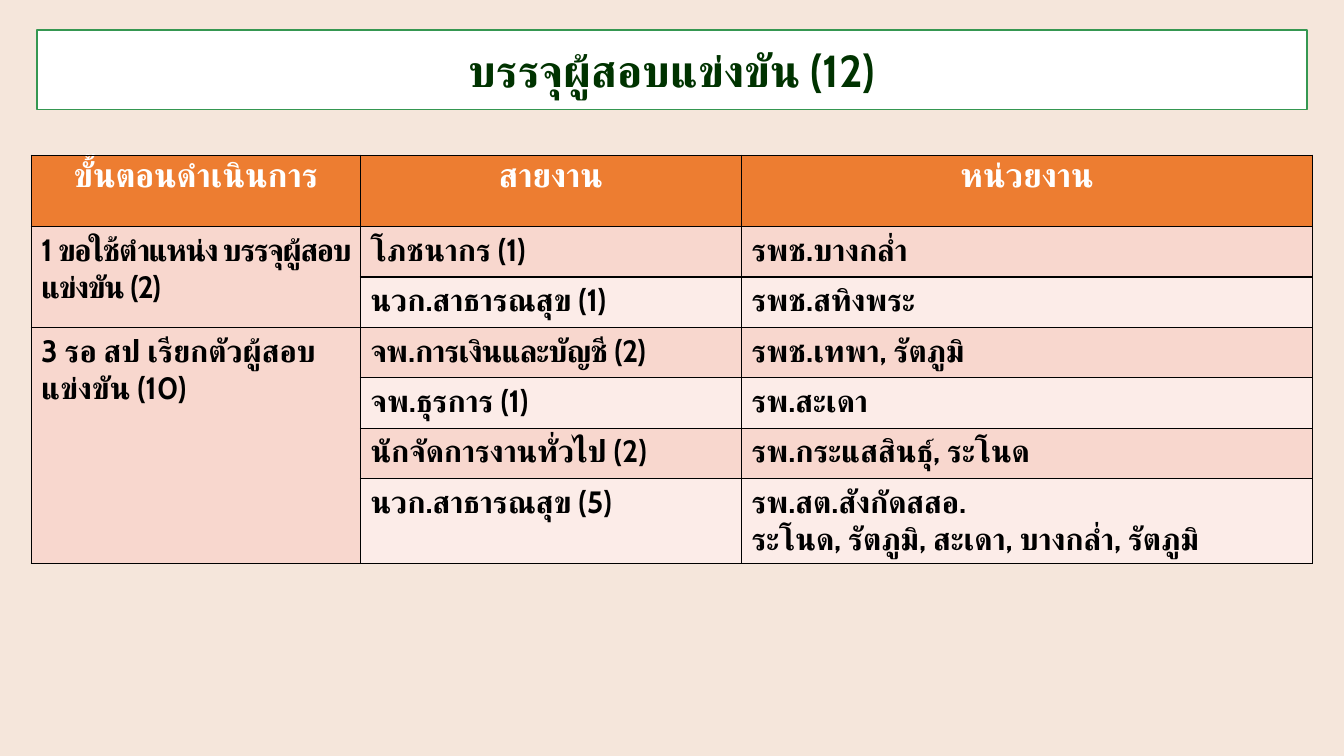
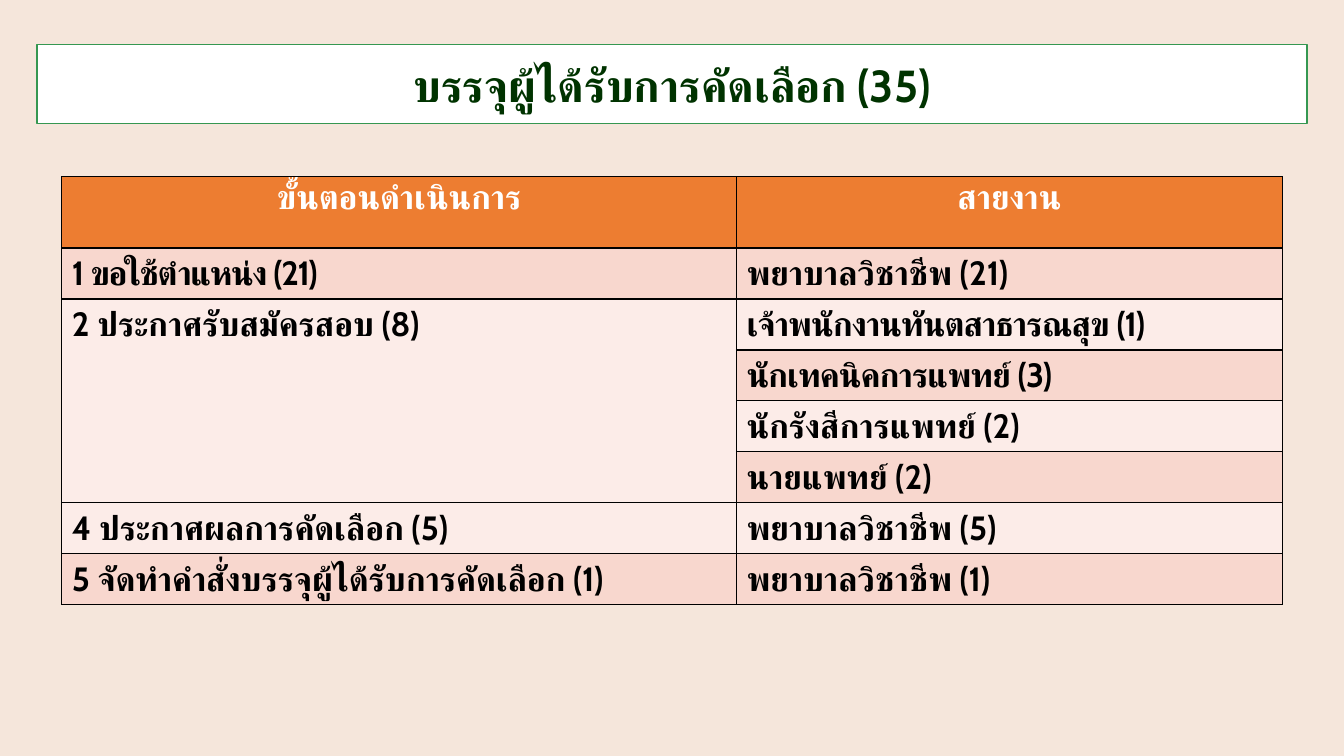
"""Builds two slides of recruitment tables, each under a rounded title bar."""
from lxml import etree
from pptx import Presentation
from pptx.dml.color import RGBColor
from pptx.enum import text
from pptx.oxml import ns
from pptx import util as u

CREAM = RGBColor(0xF5, 0xE6, 0xDB)
WHITE = RGBColor(0xFF, 0xFF, 0xFF)
BLACK = RGBColor(0x00, 0x00, 0x00)
LEAF = RGBColor(0x35, 0x97, 0x51)
FOREST = RGBColor(0x00, 0x33, 0x00)
ORANGE = RGBColor(0xED, 0x7D, 0x31)
BANDS = (RGBColor(0xFC, 0xEC, 0xE8), RGBColor(0xF8, 0xD7, 0xCE))

FONT = "Cabin"
WIDTH, HEIGHT = u.Cm(33.87), u.Cm(19.05)
TITLE_WIDTH, TITLE_HEIGHT = u.Cm(32), u.Cm(2)
HEADER_HEIGHT, ROW_HEIGHT = u.Cm(1.8), u.Cm(1.27)
TIGHT, SNUG = -1, -0.6

SLIDES = (
    {
        "title": "บรรจุผู้สอบแข่งขัน (12)", "title_top": 0.76,
        "table_top": 3.91, "columns": (8.3, 9.6, 14.4), "size": 22,
        "rows": (
            ("ขั้นตอนดำเนินการ", "สายงาน", "หน่วยงาน"),
            ("1 ขอใช้ตำแหน่ง บรรจุผู้สอบแข่งขัน (2)", "โภชนากร (1)", "รพช.บางกล่ำ"),
            (None, "นวก.สาธารณสุข (1)", "รพช.สทิงพระ"),
            ("3 รอ สป เรียกตัวผู้สอบแข่งขัน (10)", "จพ.การเงินและบัญชี (2)",
             "รพช.เทพา, รัตภูมิ"),
            (None, "จพ.ธุรการ (1)", "รพ.สะเดา"),
            (None, "นักจัดการงานทั่วไป (2)", "รพ.กระแสสินธุ์, ระโนด"),
            (None, "นวก.สาธารณสุข (5)",
             "รพ.สต.สังกัดสสอ.\nระโนด, รัตภูมิ, สะเดา, บางกล่ำ, รัตภูมิ"),
        ),
        "spacing": {(1, 0): TIGHT, (3, 1): SNUG},
    },
    {
        "title": "บรรจุผู้ได้รับการคัดเลือก (35)", "title_top": 1.12,
        "table_top": 4.45, "columns": (17, 13.75), "size": 24,
        "rows": (
            ("ขั้นตอนดำเนินการ", "สายงาน"),
            ("1 ขอใช้ตำแหน่ง (21)", "พยาบาลวิชาชีพ (21)"),
            ("2 ประกาศรับสมัครสอบ (8)", "เจ้าพนักงานทันตสาธารณสุข (1)"),
            (None, "นักเทคนิคการแพทย์ (3)"),
            (None, "นักรังสีการแพทย์ (2)"),
            (None, "นายแพทย์ (2)"),
            ("4 ประกาศผลการคัดเลือก (5)", "พยาบาลวิชาชีพ (5)"),
            ("5 จัดทำคำสั่งบรรจุผู้ได้รับการคัดเลือก (1)", "พยาบาลวิชาชีพ (1)"),
        ),
        "spacing": {(1, 0): TIGHT, (2, 1): SNUG, (3, 1): SNUG},
    },
)


def assign(target, values):
    """Set each named attribute on the target."""
    for name, value in values.items():
        setattr(target, name, value)


class Pages:
    """Holds the deck, its style and the current page."""

    def __init__(self):
        """Start a deck with the shared background."""
        self.deck = Presentation()
        assign(self.deck, {"slide_width": WIDTH, "slide_height": HEIGHT})
        self.paint(self.deck.slide_master.background.fill, CREAM)
        self.page = None

    def paint(self, fill, color):
        """Apply a solid colour."""
        fill.solid()
        fill.fore_color.rgb = color

    def add_words(self, frame, words, size, color, align, spacing=0):
        """Fill a text frame with bold text, one paragraph per line."""
        frame.text = words
        for para in frame.paragraphs:
            para.alignment = align
            for span in para.runs:
                assign(span.font, {"name": FONT, "size": u.Pt(size), "bold": True})
                span.font.color.rgb = color
                properties = span.font._element
                properties.set("spc", str(round(spacing * 100)))
                etree.SubElement(properties, ns.qn("a:cs"), typeface=FONT)

    def add_page(self):
        """Begin a page that has only a title."""
        self.page = self.deck.slides.add_slide(self.deck.slide_layouts[5])

    def add_title(self, words, top):
        """Shape the title placeholder into a rounded bar."""
        bar = self.page.shapes.title
        assign(bar, {"left": (WIDTH - TITLE_WIDTH) // 2, "top": u.Cm(top),
                     "width": TITLE_WIDTH, "height": TITLE_HEIGHT})
        outline = etree.SubElement(bar.element.spPr, ns.qn("a:prstGeom"),
                                   prst="roundRect")
        etree.SubElement(outline, ns.qn("a:avLst"))
        self.paint(bar.fill, WHITE)
        bar.line.color.rgb = LEAF
        bar.line.width = u.Pt(1)
        frame = bar.text_frame
        assign(frame, {"word_wrap": True, "auto_size": text.MSO_AUTO_SIZE.NONE,
                       "vertical_anchor": text.MSO_ANCHOR.MIDDLE})
        assign(frame, {f"margin_{side}": u.Cm(0.51)
                       for side in ("left", "top", "right", "bottom")})
        self.add_words(frame, words, 32, FOREST, text.PP_ALIGN.CENTER)

    def add_borders(self, cell):
        """Draw a thin black line on all four sides of a cell."""
        properties = cell._tc.get_or_add_tcPr()
        for side in "LRTB":
            line = etree.SubElement(properties, ns.qn(f"a:ln{side}"), w=str(u.Pt(1)))
            fill = etree.SubElement(line, ns.qn("a:solidFill"))
            etree.SubElement(fill, ns.qn("a:srgbClr"), val=str(BLACK))

    def add_table(self, rows, columns, top, size, spacing):
        """Add a centred table; None joins a cell to the one above."""
        widths = [u.Cm(column) for column in columns]
        height = HEADER_HEIGHT + ROW_HEIGHT * (len(rows) - 1)
        table = self.page.shapes.add_table(
            len(rows), len(widths), (WIDTH - sum(widths)) // 2, u.Cm(top),
            sum(widths), height).table
        assign(table, {"first_row": False, "horz_banding": False})
        for column, width in zip(table.columns, widths):
            column.width = width
        for r, row in enumerate(rows):
            table.rows[r].height = ROW_HEIGHT if r else HEADER_HEIGHT
            for c, words in enumerate(row):
                cell = table.cell(r, c)
                self.add_borders(cell)
                self.paint(cell.fill, BANDS[r % 2] if r else ORANGE)
                if r == 0:
                    cell.margin_top = 0
                    self.add_words(cell.text_frame, words, 24, WHITE,
                                   text.PP_ALIGN.CENTER)
                elif words:
                    self.add_words(cell.text_frame, words, size, BLACK,
                                   text.PP_ALIGN.LEFT, spacing.get((r, c), 0))
        self.join_cells(table, rows)

    def join_cells(self, table, rows):
        """Merge each first-column cell with the empty ones below it."""
        starts = [r for r, row in enumerate(rows) if row[0]] + [len(rows)]
        for start, end in zip(starts, starts[1:]):
            if end - start > 1:
                table.cell(start, 0).merge(table.cell(end - 1, 0))


def main():
    """Build and save the deck."""
    pages = Pages()
    for slide in SLIDES:
        pages.add_page()
        pages.add_title(slide["title"], slide["title_top"])
        pages.add_table(slide["rows"], slide["columns"], slide["table_top"],
                        slide["size"], slide["spacing"])
    pages.deck.save("out.pptx")


if __name__ == "__main__":
    main()
